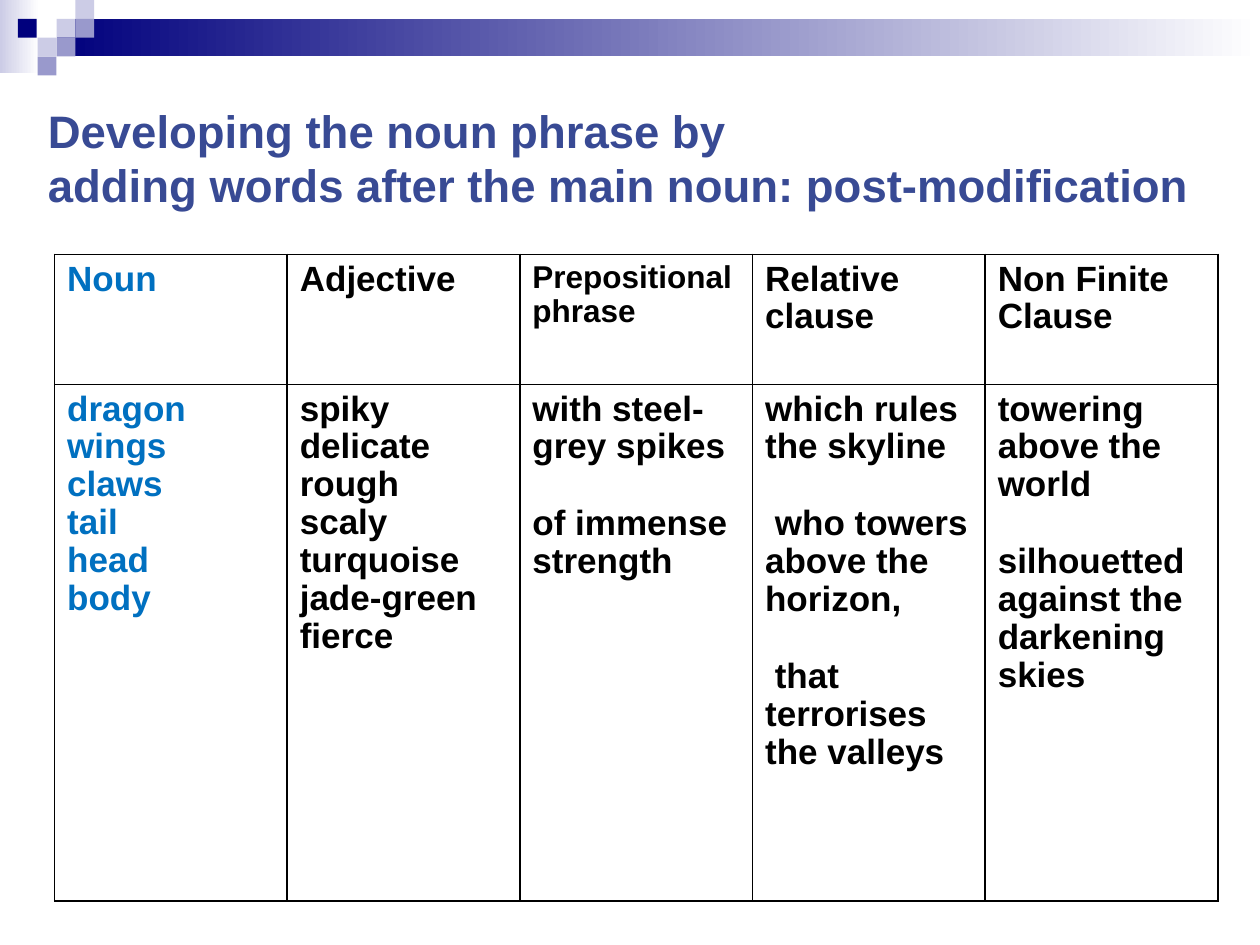
from lxml import etree
from pptx import Presentation
from pptx.dml.color import RGBColor
from pptx.enum.shapes import MSO_SHAPE
from pptx.enum.text import MSO_ANCHOR, PP_ALIGN
from pptx.oxml.ns import qn
from pptx.util import Cm, Pt

RECTANGLE = MSO_SHAPE.RECTANGLE
MIDDLE = MSO_ANCHOR.MIDDLE
LEFT = PP_ALIGN.LEFT

FONT = "Arial"
NAVY = RGBColor(0x00, 0x00, 0x7D)
LILAC = RGBColor(0xCC, 0xCC, 0xE6)
LAVENDER = RGBColor(0x99, 0x99, 0xCC)
TITLE_BLUE = RGBColor(0x38, 0x4A, 0x94)
NOUN_BLUE = RGBColor(0x00, 0x70, 0xC0)
BLACK = RGBColor(0x00, 0x00, 0x00)
WHITE = RGBColor(0xFF, 0xFF, 0xFF)

TITLE_LINES = ["Developing the noun phrase by ",
               "adding words after the main noun: post-modification"]

# Heading, heading size, examples, gap before each further example
COLUMNS = [
    ("Noun", 20, ["dragon", "wings", "claws", "tail", "head", "body"], 0),
    ("Adjective", 20, ["spiky", "delicate", "rough", "scaly", "turquoise",
                       "jade-green", "fierce"], 0),
    ("Prepositional phrase", 18,
     ["with steel-grey spikes", "of immense strength"], 22.3),
    ("Relative clause", 20,
     ["which rules the skyline", " who towers above the horizon,",
      " that terrorises the valleys"], 22.3),
    ("Non Finite Clause", 20,
     ["towering above the world",
      "silhouetted against the darkening skies"], 22.3),
]

# Mosaic squares: column, row, colour
TILE = 0.38
TILES = [(3, 1, LILAC), (4, 0, LILAC), (4, 1, LAVENDER), (2, 2, LILAC),
         (0.95, 1, NAVY), (3, 2, LAVENDER), (2, 3, LAVENDER)]


def add_block(slide, left, top, width, height, color, fade=False):
    block = slide.shapes.add_shape(RECTANGLE, Cm(left), Cm(top),
                                   Cm(width), Cm(height))
    block.shadow.inherit = False
    block.line.fill.background()
    if fade:
        block.fill.gradient()
        block.fill.gradient_angle = 0
        for stop, stop_color, position in zip(block.fill.gradient_stops,
                                              (color, WHITE), (0, 1)):
            stop.color.rgb = stop_color
            stop.position = position
    else:
        block.fill.solid()
        block.fill.fore_color.rgb = color


def add_run(paragraph, text, size, color):
    run = paragraph.add_run()
    run.text = text
    run.font.name = FONT
    run.font.size = Pt(size)
    run.font.bold = True
    run.font.color.rgb = color


def add_banner(slide):
    add_block(slide, 0, 0, 0.79, 1.47, LILAC, fade=True)
    add_block(slide, 1.14, TILE, 24.26, 0.76, NAVY, fade=True)
    for column, row, color in TILES:
        add_block(slide, column * TILE, row * TILE, TILE, TILE, color)


def format_title(slide):
    title = slide.shapes.title
    title.left, title.top = Cm(0.71), Cm(1.27)
    title.width, title.height = Cm(23.8), Cm(3.81)
    title.text_frame.vertical_anchor = MIDDLE
    paragraph = title.text_frame.paragraphs[0]
    paragraph.alignment = LEFT
    for number, line in enumerate(TITLE_LINES):
        if number:
            paragraph.add_line_break()
        add_run(paragraph, line, 26, TITLE_BLUE)


def set_borders(cell):
    properties = cell._tc.get_or_add_tcPr()
    for position, side in enumerate(("a:lnL", "a:lnR", "a:lnT", "a:lnB")):
        border = etree.Element(qn(side), w=str(Pt(1)))
        fill = etree.SubElement(border, qn("a:solidFill"))
        etree.SubElement(fill, qn("a:srgbClr"), val=str(BLACK))
        properties.insert(position, border)


def fill_cell(cell, lines, size, color, gap=0):
    cell.fill.background()
    set_borders(cell)
    frame = cell.text_frame
    for number, line in enumerate(lines):
        paragraph = frame.add_paragraph() if number else frame.paragraphs[0]
        paragraph.line_spacing = 0.97
        paragraph.space_before = Pt(gap if number else 0)
        add_run(paragraph, line, size, color)


def add_phrase_table(slide):
    table = slide.shapes.add_table(2, len(COLUMNS), Cm(1.1), Cm(5.13),
                                   Cm(23.45), Cm(13.03)).table
    table.first_row = table.horz_banding = False
    table.rows[0].height, table.rows[1].height = Cm(2.62), Cm(10.41)
    for index, (heading, size, examples, gap) in enumerate(COLUMNS):
        table.columns[index].width = Cm(4.69)
        color = BLACK if index else NOUN_BLUE
        fill_cell(table.cell(0, index), [heading], size, color)
        fill_cell(table.cell(1, index), examples, 20, color, gap)


def main():
    prs = Presentation()
    prs.slide_width, prs.slide_height = Cm(25.4), Cm(19.05)
    slide = prs.slides.add_slide(prs.slide_layouts[5])
    add_banner(slide)
    format_title(slide)
    add_phrase_table(slide)
    prs.save("out.pptx")


if __name__ == "__main__":
    main()
